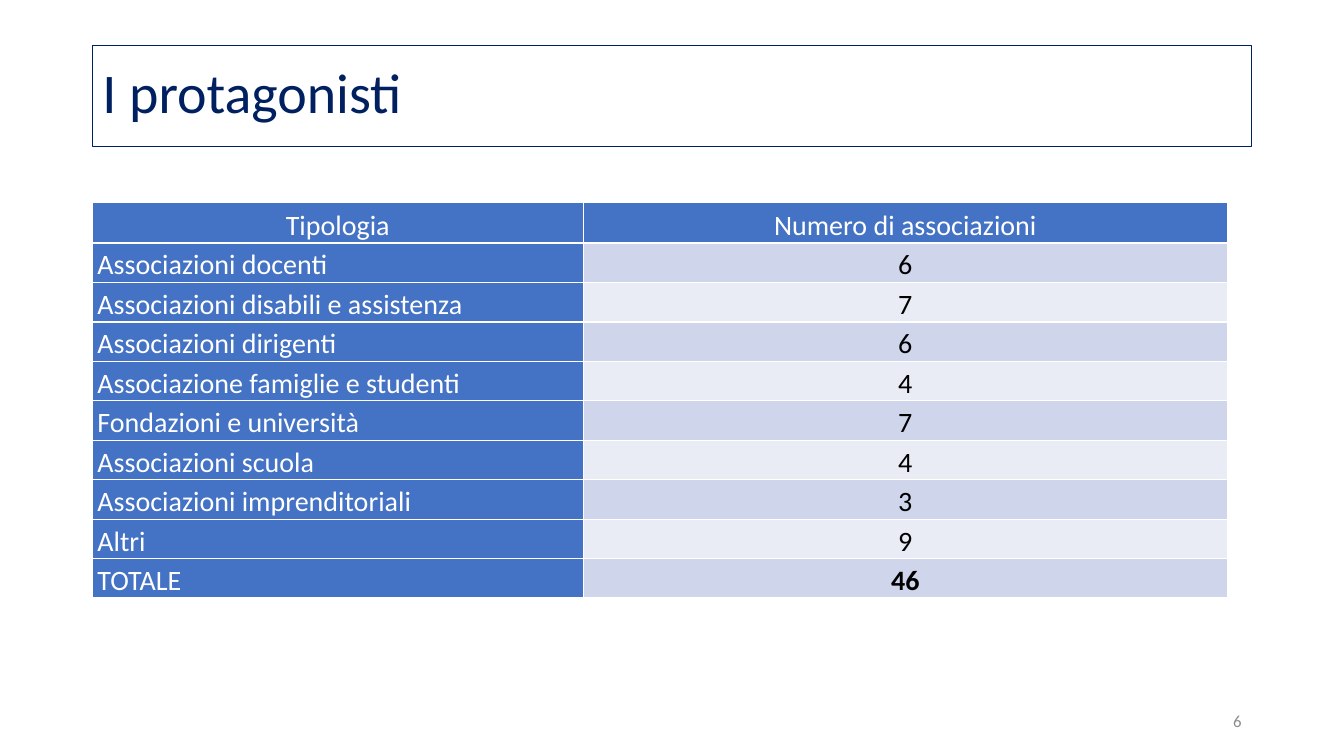
from dataclasses import dataclass
from typing import Any

from lxml.etree import SubElement
from pptx import Presentation
from pptx.dml.color import RGBColor
from pptx.enum.text import MSO_ANCHOR, PP_ALIGN
from pptx.oxml.ns import qn
from pptx.util import Pt

HUES = {
    "navy": "002060",
    "blue": "4472C4",
    "dark": "CFD5EA",
    "light": "E9EBF5",
    "white": "FFFFFF",
    "black": "000000",
    "gray": "8C8C8C",
}
INSET = {"margin_left": Pt(3.6), "margin_right": Pt(3.6), "margin_top": 0,
         "margin_bottom": 0, "vertical_anchor": MSO_ANCHOR.BOTTOM}
FRAME = {"word_wrap": True, "vertical_anchor": MSO_ANCHOR.MIDDLE}


@dataclass
class Style:
    size: float
    hue: str
    align: PP_ALIGN = PP_ALIGN.LEFT
    space: float = 1.0
    bold: bool = False


@dataclass
class Entry:
    label: str
    count: str
    bold: bool = False


ROWS = [
    Entry("Associazioni docenti", "6"),
    Entry("Associazioni disabili e assistenza", "7"),
    Entry("Associazioni dirigenti", "6"),
    Entry("Associazione famiglie e studenti", "4"),
    Entry("Fondazioni e università", "7"),
    Entry("Associazioni scuola", "4"),
    Entry("Associazioni imprenditoriali", "3"),
    Entry("Altri", "9"),
    Entry("TOTALE", "46", True),
]


def rgb(hue: str) -> RGBColor:
    return RGBColor.from_string(HUES[hue])


def apply(item: Any, values: dict[str, Any]) -> None:
    for name, value in values.items():
        setattr(item, name, value)


def write(frame: Any, text: str, style: Style) -> None:
    para = frame.paragraphs[0]
    apply(para, {"alignment": style.align, "line_spacing": style.space})
    run = para.add_run()
    run.text = text
    apply(run.font, {"name": "Calibri", "size": Pt(style.size), "bold": style.bold})
    run.font.color.rgb = rgb(style.hue)


def edge(cell: Any) -> None:
    props = cell._tc.get_or_add_tcPr()
    for index, side in enumerate(("lnL", "lnR", "lnT", "lnB")):
        line = SubElement(props, qn(f"a:{side}"), w=str(Pt(1)))
        fill = SubElement(line, qn("a:solidFill"))
        SubElement(fill, qn("a:srgbClr"), val=HUES["white"])
        props.insert(index, line)


def paint(cell: Any, text: str, fill: str, style: Style) -> None:
    apply(cell, INSET)
    cell.fill.solid()
    cell.fill.fore_color.rgb = rgb(fill)
    write(cell.text_frame, text, style)
    edge(cell)


def add_title(slide: Any) -> None:
    title = slide.shapes.title
    apply(title, {"left": Pt(66), "top": Pt(32.4), "width": Pt(828), "height": Pt(72)})
    title.line.color.rgb = rgb("navy")
    title.line.width = Pt(0.75)
    apply(title.text_frame, FRAME)
    write(title.text_frame, "I protagonisti", Style(40, "navy", space=0.9))


def add_grid(slide: Any) -> None:
    grid = slide.shapes.add_table(
        len(ROWS) + 1, 2, Pt(66), Pt(144.8), Pt(810.8), Pt(268.6)).table
    apply(grid, {"first_row": False, "horz_banding": False})
    for column, width in zip(grid.columns, (350.6, 460.2)):
        column.width = Pt(width)
    for index, row in enumerate(grid.rows):
        row.height = Pt(26.6 if index else 28.8)
    mid = PP_ALIGN.CENTER
    for index, text in enumerate(("Tipologia", "Numero di associazioni")):
        paint(grid.cell(0, index), text, "blue", Style(20, "white", mid, 1.15))
    for index, entry in enumerate(ROWS, 1):
        band = "dark" if index % 2 else "light"
        paint(grid.cell(index, 0), entry.label, "blue",
              Style(20, "white", space=1.15))
        paint(grid.cell(index, 1), entry.count, band,
              Style(20, "black", mid, 1.15, entry.bold))


def add_number(slide: Any) -> None:
    box = slide.shapes.add_textbox(Pt(678), Pt(500.5), Pt(216), Pt(28.8))
    apply(box.text_frame, FRAME)
    write(box.text_frame, "6", Style(12, "gray", PP_ALIGN.RIGHT))


def main() -> None:
    deck = Presentation()
    apply(deck, {"slide_width": Pt(960), "slide_height": Pt(540)})
    slide = deck.slides.add_slide(deck.slide_layouts[5])
    add_title(slide)
    add_grid(slide)
    add_number(slide)
    deck.save("out.pptx")


if __name__ == "__main__":
    main()
